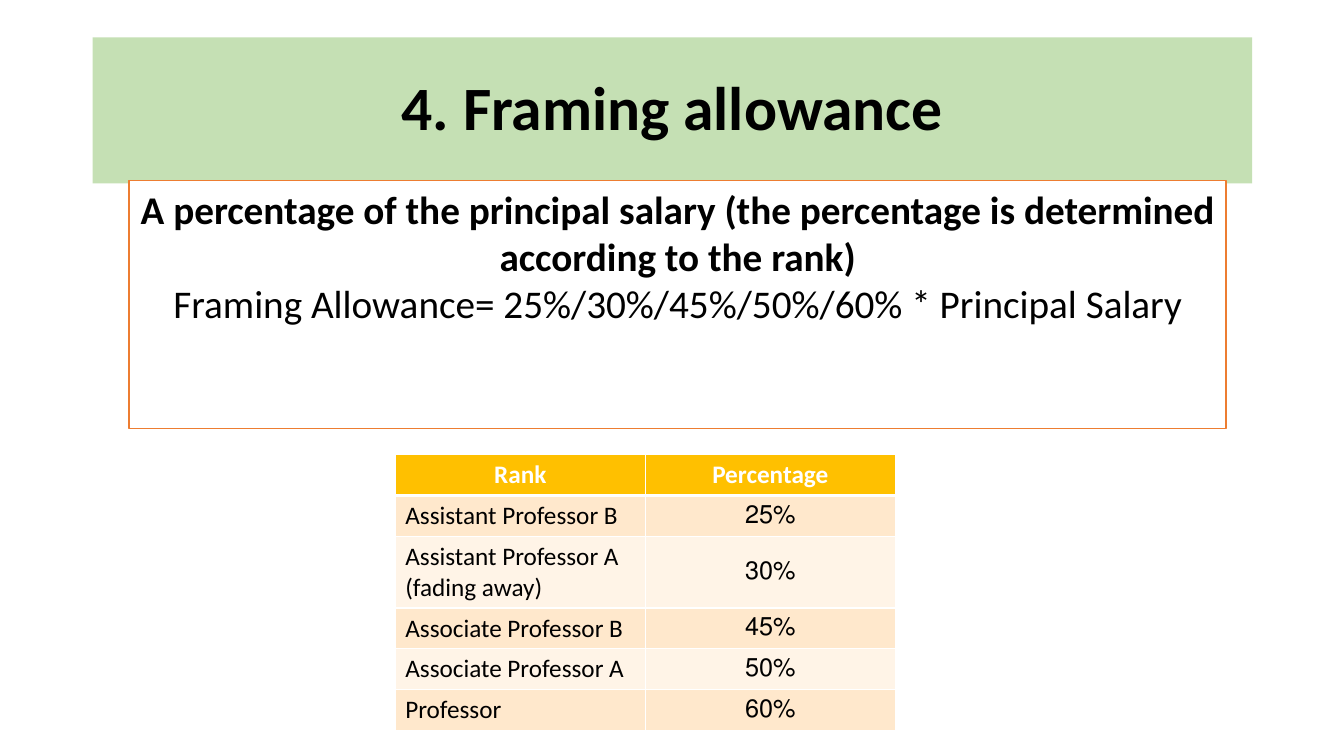
"""Build the framing allowance slide with its rank and percentage table."""
from lxml import etree
from pptx import Presentation
from pptx import util as u
from pptx.dml.color import RGBColor
from pptx.enum import shapes, text
from pptx.oxml.ns import qn

PX = 9144
THEME = {
    "font": "Calibri", "title": 44, "body": 28, "cell": 18,
    "ink": "000000", "paper": "FFFFFF", "banner": "C5E0B4", "outline": "ED7D31",
    "header": "FFC000", "bands": ("FFE8CC", "FFF4E7"),
}
CENTER, LEFT = text.PP_ALIGN.CENTER, text.PP_ALIGN.LEFT
MIDDLE, TOP = text.MSO_ANCHOR.MIDDLE, text.MSO_ANCHOR.TOP


def write(para, words, size, bold, align=CENTER, color="ink"):
    para.alignment = align
    span = para.add_run()
    span.text = words
    values = {"name": THEME["font"], "size": u.Pt(THEME[size]), "bold": bold}
    for name, value in values.items():
        setattr(span.font, name, value)
    span.font.color.rgb = RGBColor.from_string(THEME[color])


def add_panel(left, top, width, height, fill, anchor):
    panel = page.shapes.add_shape(
        shapes.MSO_SHAPE.RECTANGLE, left * PX, top * PX, width * PX, height * PX)
    panel.shadow.inherit = False
    panel.fill.solid()
    panel.fill.fore_color.rgb = RGBColor.from_string(THEME[fill])
    panel.line.fill.background()
    panel.text_frame.word_wrap = True
    panel.text_frame.vertical_anchor = anchor
    return panel


deck = Presentation()
deck.slide_width, deck.slide_height = 1333 * PX, 750 * PX
page = deck.slides.add_slide(deck.slide_layouts[6])

banner = add_panel(92, 37, 1150, 145, "banner", MIDDLE)
heading = banner.text_frame.paragraphs[0]
heading.line_spacing = 0.9
write(heading, "4. Framing allowance", "title", True)

ranks = [
    ("Rank", "Percentage"),
    ("Assistant Professor B", "25%"),
    ("Assistant Professor A (fading away)", "30%"),
    ("Associate Professor B", "45%"),
    ("Associate Professor A", "50%"),
    ("Professor", "60%"),
]
heights = [40, 40, 70, 40, 40, 40]
table = page.shapes.add_table(
    len(ranks), 2, 392 * PX, 451 * PX, 496 * PX, sum(heights) * PX).table
for column in table.columns:
    column.width = 248 * PX

for row, (labels, height) in enumerate(zip(ranks, heights)):
    table.rows[row].height = height * PX
    is_header = row == 0
    fill = THEME["header"] if is_header else THEME["bands"][(row - 1) % 2]
    borders = {"a:lnL": 1, "a:lnR": 1,
               "a:lnT": 3 if row == 1 else 1, "a:lnB": 3 if is_header else 1}
    for column, label in enumerate(labels):
        cell = table.cell(row, column)
        cell.vertical_anchor = MIDDLE
        properties = cell._tc.get_or_add_tcPr()
        for side, points in borders.items():
            edge = etree.SubElement(properties, qn(side), w=str(u.Pt(points)))
            paint = etree.SubElement(edge, qn("a:solidFill"))
            etree.SubElement(paint, qn("a:srgbClr"), val=THEME["paper"])
        cell.fill.solid()
        cell.fill.fore_color.rgb = RGBColor.from_string(fill)
        centered = is_header or column == 1
        para = cell.text_frame.paragraphs[0]
        if centered:
            para._p.get_or_add_pPr().set("rtl", "1")
        write(para, label, "cell", is_header, CENTER if centered else LEFT,
              "paper" if is_header else "ink")

rule_box = add_panel(128, 179, 1088, 246, "paper", TOP)
rule_box.line.color.rgb = RGBColor.from_string(THEME["outline"])
rule_box.line.width = u.Pt(1)
frame = rule_box.text_frame
write(frame.paragraphs[0],
      "A percentage of the principal salary "
      "(the percentage is determined according to the rank)", "body", True)
write(frame.add_paragraph(),
      "Framing Allowance= 25%/30%/45%/50%/60% * Principal Salary", "body", False)

deck.save("out.pptx")
